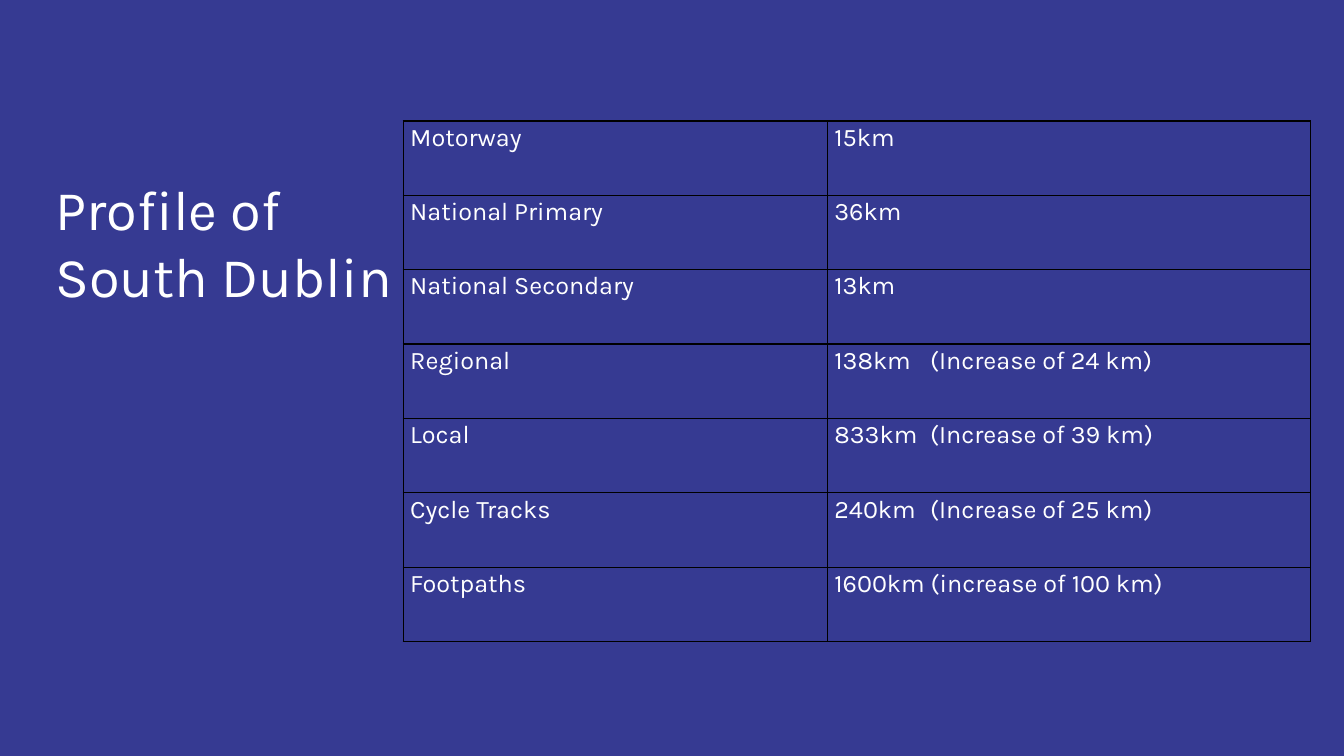
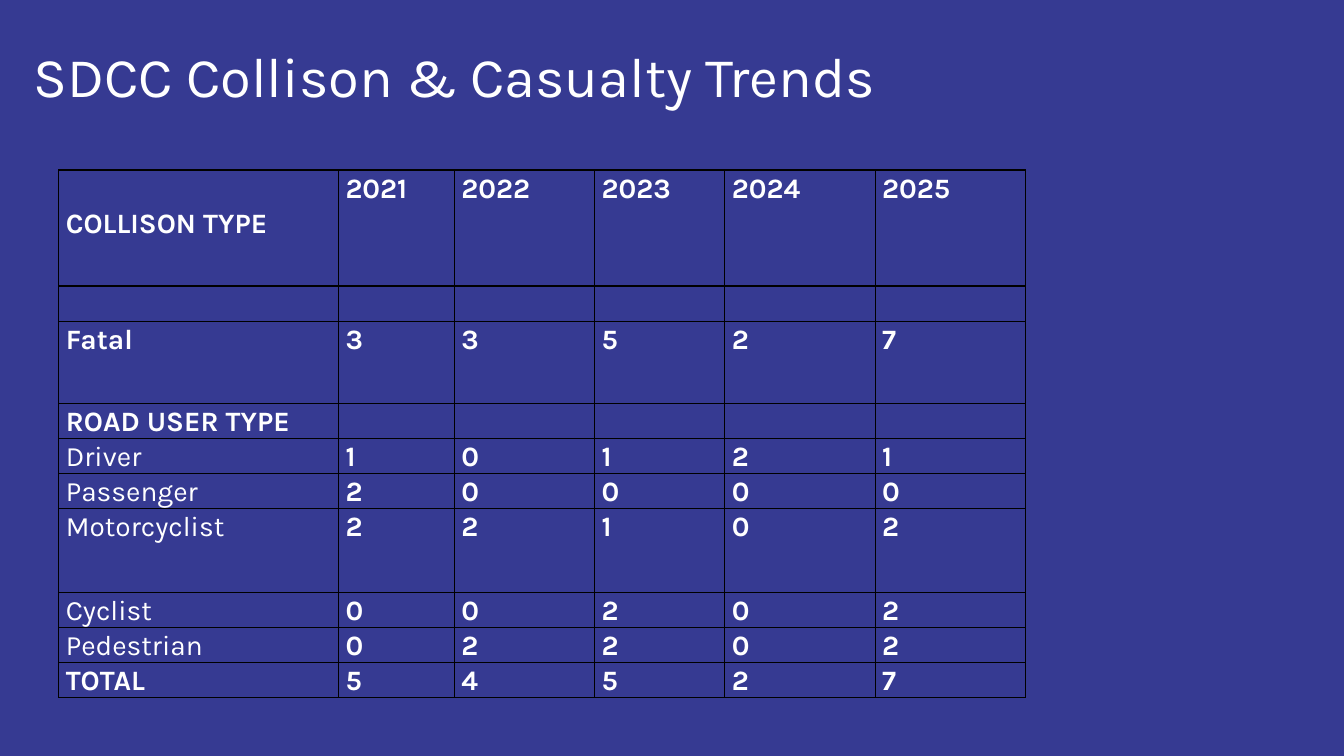
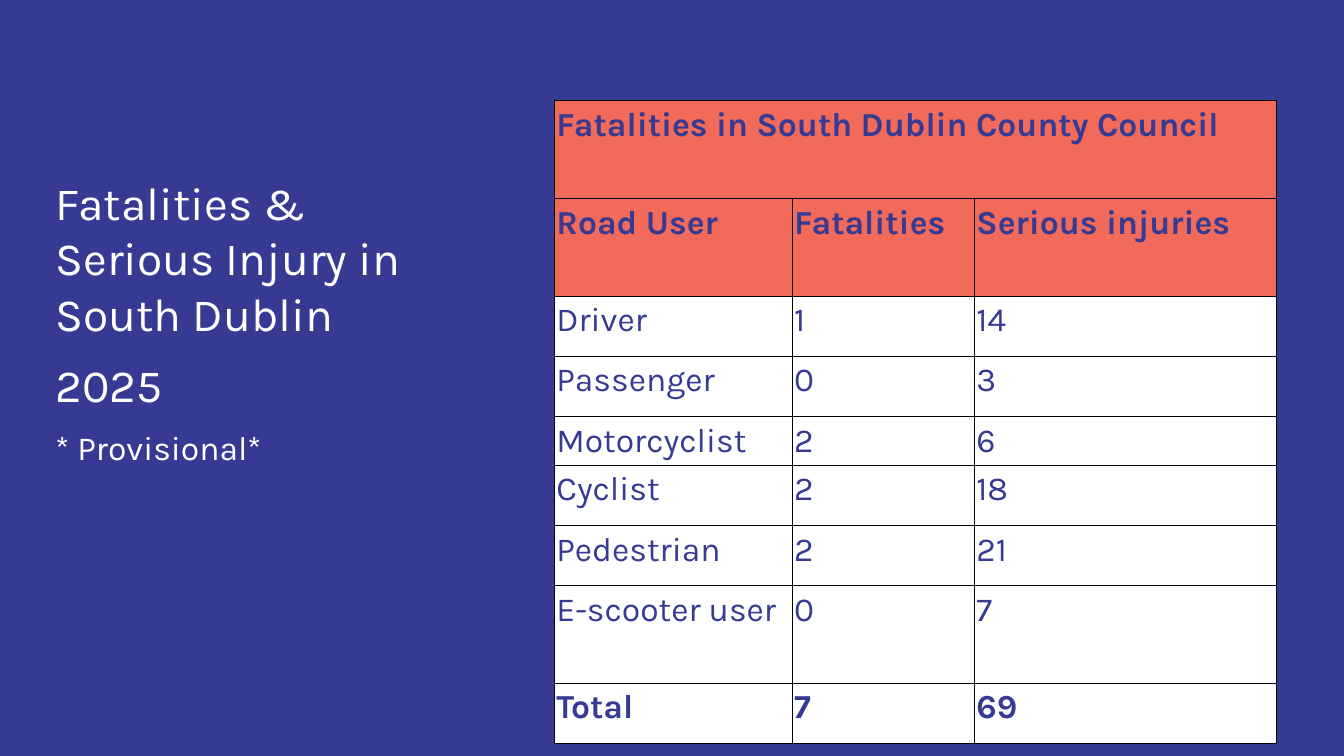
from lxml.etree import SubElement
from pptx import Presentation
from pptx.dml.color import RGBColor
from pptx.enum.text import MSO_ANCHOR, MSO_AUTO_SIZE, PP_ALIGN
from pptx.oxml.ns import qn
from pptx.util import Inches, Pt

FONT = "Karla"
NAVY, WHITE, CORAL, BLACK = "363A92", "FFFFFF", "F26A5A", "000000"
GRID_COLUMNS, GRID_ROWS = 160, 90


def paint(hex_color):
    """Turn a hex string into a colour."""
    return RGBColor.from_string(hex_color)


class RoadDeck:
    """Holds the deck style and the current slide."""

    def __init__(self):
        """Set the slide size, the grid and the shared background."""
        self.deck = Presentation()
        self.deck.slide_width = Inches(13.33)
        self.deck.slide_height = Inches(7.5)
        background = self.deck.slide_master.background.fill
        background.solid()
        background.fore_color.rgb = paint(NAVY)
        self.slide = None

    def across(self, columns):
        """Give the width of a number of grid columns."""
        return int(self.deck.slide_width * columns / GRID_COLUMNS)

    def down(self, rows):
        """Give the height of a number of grid rows."""
        return int(self.deck.slide_height * rows / GRID_ROWS)

    def style(self, para, size, color, bold=False):
        """Format every run of a paragraph."""
        for span in para.runs:
            span.font.name = FONT
            span.font.size = Pt(size)
            span.font.bold = bold
            span.font.color.rgb = paint(color)

    def page(self, left, top, width, height, lines):
        """Start a slide whose title is a list of texts with sizes."""
        self.slide = self.deck.slides.add_slide(self.deck.slide_layouts[5])
        box = self.slide.shapes.title
        box.left, box.top = self.across(left), self.down(top)
        box.width, box.height = self.across(width), self.down(height)
        frame = box.text_frame
        frame.margin_left = frame.margin_right = 0
        frame.margin_top = frame.margin_bottom = 0
        frame.word_wrap = True
        frame.auto_size = MSO_AUTO_SIZE.NONE
        frame.vertical_anchor = MSO_ANCHOR.TOP
        frame.text = "\n".join(text for text, size in lines)
        for para, (text, size) in zip(frame.paragraphs, lines):
            para.alignment = PP_ALIGN.LEFT
            para.line_spacing = 1.0
            para.space_after = Pt(10.9)
            self.style(para, size, WHITE)

    def border(self, cell):
        """Draw a thin black line on each side of a cell."""
        properties = cell._tc.get_or_add_tcPr()
        for side in ("a:lnL", "a:lnR", "a:lnT", "a:lnB"):
            line = SubElement(properties, qn(side), w=str(Pt(1)))
            fill = SubElement(line, qn("a:solidFill"))
            SubElement(fill, qn("a:srgbClr"), val=BLACK)

    def tab_stop(self, para, position):
        """Set one left tab stop on a paragraph."""
        tabs = SubElement(para._p.get_or_add_pPr(), qn("a:tabLst"))
        SubElement(tabs, qn("a:tab"), pos=str(position), algn="l")

    def table(self, left, top, widths, heights, values, size, color=WHITE,
              side=0.07, above=0, align=PP_ALIGN.LEFT,
              bold=lambda row, column: False, fill=lambda row: None):
        """Add a bordered table and return it."""
        table = self.slide.shapes.add_table(
            len(heights), len(widths), self.across(left), self.down(top),
            self.across(sum(widths)), self.down(sum(heights))).table
        table.first_row = table.horz_banding = False
        for column, width in zip(table.columns, widths):
            column.width = self.across(width)
        for row, height in zip(table.rows, heights):
            row.height = self.down(height)
        for row, texts in enumerate(values):
            for column, text in enumerate(texts):
                cell = table.cell(row, column)
                cell.margin_left = cell.margin_right = Inches(side)
                cell.margin_top, cell.margin_bottom = Inches(above), 0
                self.border(cell)
                if fill(row):
                    cell.fill.solid()
                    cell.fill.fore_color.rgb = paint(fill(row))
                else:
                    cell.fill.background()
                para = cell.text_frame.paragraphs[0]
                para.text = text
                para.alignment = align
                para.line_spacing = 1.07
                para.space_after = Pt(8)
                if "\t" in text:
                    self.tab_stop(para, Inches(0.95))
                self.style(para, size, color, bold(row, column))
        return table


def road_profile(show):
    """Build the slide on road lengths."""
    show.page(6.6, 20.75, 41.4, 55.2, [("Profile of South Dublin", 40)])
    lengths = [
        ("Motorway", "15km"),
        ("National Primary", "36km"),
        ("National Secondary", "13km"),
        ("Regional", "138km\t(Increase of 24 km)"),
        ("Local", "833km\t(Increase of 39 km)"),
        ("Cycle Tracks", "240km\t(Increase of 25 km)"),
        ("Footpaths", "1600km (increase of 100 km)"),
    ]
    show.table(48, 14.4, [50.5, 57.5], [62 / 7] * 7, lengths, 18)


def collision_trends(show):
    """Build the slide on collisions by year."""
    show.page(4, 5, 118, 15.2, [("SDCC Collison & Casualty Trends", 40)])
    trends = [
        ("COLLISON TYPE", "2021", "2022", "2023", "2024", "2025"),
        ("",) * 6,
        ("Fatal", "3", "3", "5", "2", "7"),
        ("ROAD USER TYPE",) + ("",) * 5,
        ("Driver", "1", "0", "1", "2", "1"),
        ("Passenger", "2", "0", "0", "0", "0"),
        ("Motorcyclist", "2", "2", "1", "0", "2"),
        ("Cyclist", "0", "0", "2", "0", "2"),
        ("Pedestrian", "0", "2", "2", "0", "2"),
        ("TOTAL", "5", "4", "5", "2", "7"),
    ]
    line = 4.17
    heights = [13.8, 4.25, 9.7] + [line] * 3 + [10] + [line] * 3
    table = show.table(
        7, 20.25, [33.3, 13.8, 16.7, 15.5, 17.9, 17.9], heights, trends, 20,
        align=PP_ALIGN.JUSTIFY,
        bold=lambda row, column: column > 0 or row not in range(4, 9))
    table.cell(0, 0).margin_top = show.down(line)


def road_user_injuries(show):
    """Build the slide on fatalities and serious injuries."""
    show.page(6.6, 20.75, 48.25, 55.2, [
        ("Fatalities & Serious Injury in South Dublin", 33),
        ("2025", 33),
        ("* Provisional*", 24),
    ])
    injuries = [
        ("Fatalities in South Dublin County Council", "", ""),
        ("Road User", "Fatalities", "Serious injuries"),
        ("Driver", "1", "14"),
        ("Passenger", "0", "3"),
        ("Motorcyclist", "2", "6"),
        ("Cyclist", "2", "18"),
        ("Pedestrian", "2", "21"),
        ("E-scooter user", "0", "7"),
        ("Total", "7", "69"),
    ]
    tall, line, tight = 11.65, 7.15, 5.83
    heights = [tall, tall, line, line, tight, line, line, tall, line]
    table = show.table(
        66, 12, [28.3, 21.7, 36], heights, injuries, 24, NAVY,
        side=0.02, above=0.02,
        bold=lambda row, column: row in (0, 1, 8),
        fill=lambda row: CORAL if row < 2 else WHITE)
    table.cell(0, 0).merge(table.cell(0, 2))


def main():
    """Build and save the deck."""
    show = RoadDeck()
    road_profile(show)
    collision_trends(show)
    road_user_injuries(show)
    show.deck.save("out.pptx")


if __name__ == "__main__":
    main()
